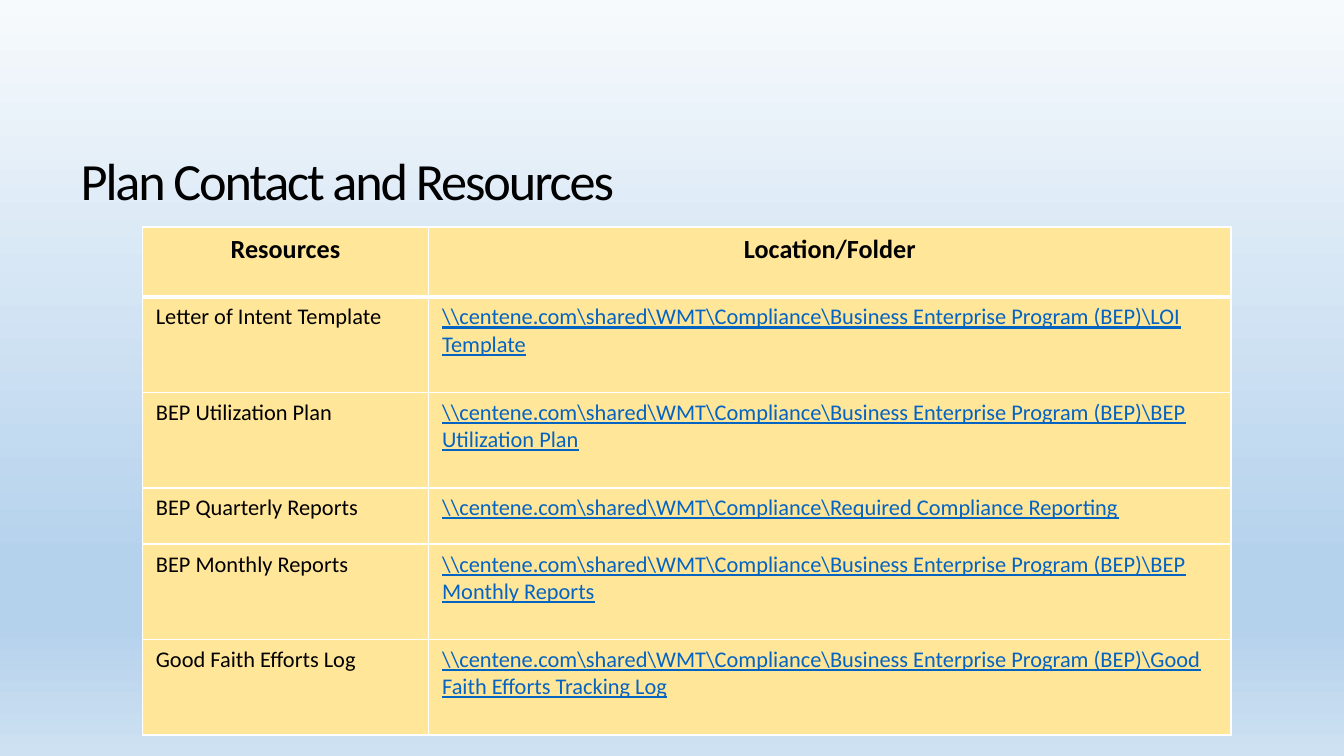
import pptx
import pptx.util
import pptx.dml.color
import pptx.enum.text
import pptx.oxml
import pptx.oxml.ns
from lxml import etree

Inches, Pt = pptx.util.Inches, pptx.util.Pt
align = pptx.enum.text.PP_ALIGN

# Content
TITLE = "Plan Contact and Resources"
HEADS = ("Resources", "Location/Folder")
ROOT = r"\\centene.com\shared\WMT\Compliance"
BEP = ROOT + r"\Business Enterprise Program (BEP)"
ROWS = [
    ("Letter of Intent Template", BEP + r"\LOI Template"),
    ("BEP Utilization Plan", BEP + r"\BEP Utilization Plan"),
    ("BEP Quarterly Reports", ROOT + r"\Required Compliance Reporting"),
    ("BEP Monthly Reports", BEP + r"\BEP Monthly Reports"),
    ("Good Faith Efforts Log", BEP + r"\Good Faith Efforts Tracking Log"),
]

# Layout and look
WIDTHS = (2.13, 5.97)
HEIGHTS = (0.52, 0.71, 0.71, 0.42, 0.71, 0.71)
STOPS = [(0, "F7FAFD"), (74, "B5D2EC"), (83, "B5D2EC"), (100, "CEE1F2")]
BLACK, WHITE, BLUE, CREAM = "000000", "FFFFFF", "0563C1", "FFE699"


def color(code):
    return pptx.dml.color.RGBColor.from_string(code)


def add_run(para, text, size, code=BLACK, bold=False, under=False):
    run = para.add_run()
    run.text = text
    font = run.font
    font.name, font.size = "Calibri", Pt(size)
    font.bold, font.underline = bold, under
    font.color.rgb = color(code)
    return run


def add_node(parent, tag, **attrs):
    return etree.SubElement(parent, pptx.oxml.ns.qn(tag), attrs)


def add_edge(cell, side, width):
    props = cell._tc.get_or_add_tcPr()
    line = add_node(props, f"a:ln{side}", w=str(Pt(width)))
    add_node(add_node(line, "a:solidFill"), "a:srgbClr", val=WHITE)


# Widescreen slide, 16 to 9
deck = pptx.Presentation()
deck.slide_width = Inches(10)
deck.slide_height = deck.slide_width * 9 // 16
slide = deck.slides.add_slide(deck.slide_layouts[5])

# Background gradient, top to bottom
fill = slide.background.fill
fill.gradient()
fill.gradient_angle = 270
stops = slide.element.find(".//" + pptx.oxml.ns.qn("a:gsLst"))
for old in list(stops):
    stops.remove(old)
for place, code in STOPS:
    stop = add_node(stops, "a:gs", pos=str(place * 1000))
    add_node(stop, "a:srgbClr", val=code)

# Title
title = slide.shapes.title
title.left, title.top = Inches(0.5), Inches(1.08)
title.width, title.height = Inches(9.22), Inches(0.54)
frame = title.text_frame
frame.word_wrap = True
frame.auto_size = pptx.enum.text.MSO_AUTO_SIZE.NONE
frame.vertical_anchor = pptx.enum.text.MSO_ANCHOR.BOTTOM
para = frame.paragraphs[0]
para.alignment, para.line_spacing = align.LEFT, 0.8
run = add_run(para, TITLE, 28)
run.font._element.set("spc", "-110")

# Table
grid = [HEADS] + ROWS
table = slide.shapes.add_table(
    len(grid), len(HEADS), Inches(1.06), Inches(1.69),
    Inches(sum(WIDTHS)), Inches(sum(HEIGHTS))).table
for col, width in zip(table.columns, WIDTHS):
    col.width = Inches(width)
for row, height in zip(table.rows, HEIGHTS):
    row.height = Inches(height)

for r, texts in enumerate(grid):
    for c, text in enumerate(texts):
        cell = table.cell(r, c)
        for side in "LRTB":
            thick = (r, side) in ((0, "B"), (1, "T"))
            add_edge(cell, side, 3 if thick else 1)
        cell.fill.solid()
        cell.fill.fore_color.rgb = color(CREAM)
        para = cell.text_frame.paragraphs[0]
        if r == 0:
            para.alignment = align.CENTER
            add_run(para, text, 14, bold=True)
        elif c == 0:
            add_run(para, text, 12)
        else:
            add_run(para, text, 12, BLUE, under=True)

deck.save("out.pptx")
